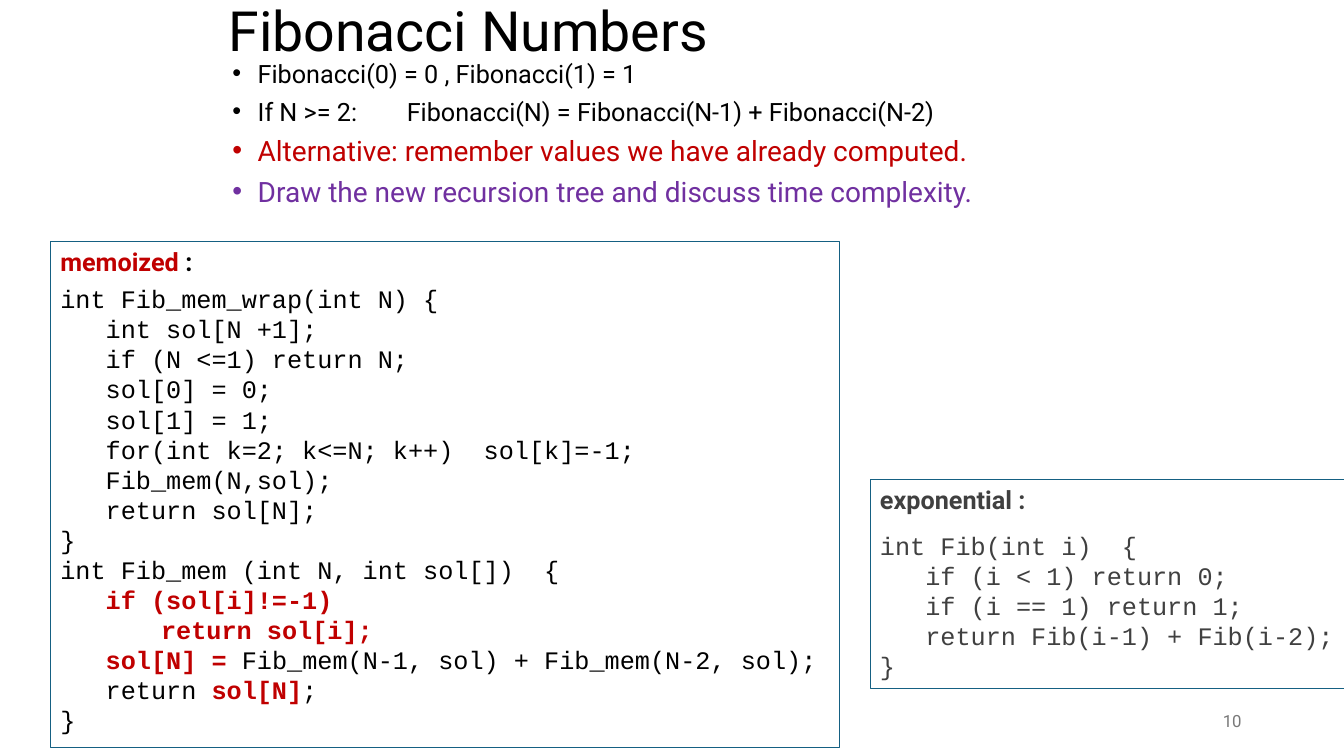
from dataclasses import dataclass

from lxml import etree
from pptx import Presentation
from pptx.dml.color import RGBColor
from pptx.enum.shapes import MSO_SHAPE
from pptx.enum.text import MSO_ANCHOR, PP_ALIGN
from pptx.oxml.ns import qn
from pptx.util import Pt

RECT = MSO_SHAPE.RECTANGLE
TOP, MIDDLE = MSO_ANCHOR.TOP, MSO_ANCHOR.MIDDLE
LEFT, RIGHT = PP_ALIGN.LEFT, PP_ALIGN.RIGHT


@dataclass(frozen=True)
class Theme:
    sans: str = "Roboto"
    mono: str = "Courier New"
    black: str = "000000"
    red: str = "C00000"
    purple: str = "7030A0"
    dark: str = "404040"
    gray: str = "797979"
    edge: str = "156082"
    title: float = 39.6
    large: float = 20
    text: float = 18
    small: float = 12


THEME = Theme()
STEP = 32.4  # three code characters
DEEP = 72
CODE_LINE = 21.5

POINTS = [
    ("Fibonacci(0) = 0 , Fibonacci(1) = 1", THEME.text, THEME.black),
    ("If N >= 2:\tFibonacci(N) = Fibonacci(N-1) + Fibonacci(N-2)", THEME.text, THEME.black),
    ("Alternative: remember values we have already computed.", THEME.large, THEME.red),
    ("Draw the new recursion tree and discuss time complexity.", THEME.large, THEME.purple),
]

# Each code line is an indent and its parts; parts at odd places are marked.
MEMO = [
    (0, ["int Fib_mem_wrap(int N) {"]),
    (STEP, ["int sol[N +1];"]),
    (STEP, ["if (N <=1) return N;"]),
    (STEP, ["sol[0] = 0;"]),
    (STEP, ["sol[1] = 1;"]),
    (STEP, ["for(int k=2; k<=N; k++)  sol[k]=-1;"]),
    (STEP, ["Fib_mem(N,sol);"]),
    (STEP, ["return sol[N];"]),
    (0, ["}"]),
    (0, ["int Fib_mem (int N, int sol[])  {"]),
    (STEP, ["", "if (sol[i]!=-1)"]),
    (DEEP, ["", "return sol[i];"]),
    (STEP, ["", "sol[N] = ", "Fib_mem(N-1, sol) + Fib_mem(N-2, sol);"]),
    (STEP, ["return ", "sol[N]", ";"]),
    (0, ["}"]),
]
PLAIN = [
    (0, ["int Fib(int i)  {"]),
    (STEP, ["if (i < 1) return 0;"]),
    (STEP, ["if (i == 1) return 1;"]),
    (STEP, ["return Fib(i-1) + Fib(i-2);"]),
    (0, ["}"]),
]


def style(run, size, color, face=THEME.sans, bold=False):
    font = run.font
    font.name, font.size, font.bold = face, Pt(size), bold
    font.color.rgb = RGBColor.from_string(color)


def add_run(para, text, *look):
    run = para.add_run()
    run.text = text
    style(run, *look)


def indent(para, left, first=0):
    props = para._p.get_or_add_pPr()
    props.set("marL", str(Pt(left)))
    props.set("indent", str(Pt(first)))
    return props


def next_para(frame, index):
    return frame.add_paragraph() if index else frame.paragraphs[0]


def add_title(slide, box):
    title = slide.shapes.title
    title.left, title.top, title.width, title.height = map(Pt, box)
    frame = title.text_frame
    frame.text = "Fibonacci Numbers"
    frame.vertical_anchor = MIDDLE
    para = frame.paragraphs[0]
    para.alignment, para.line_spacing = LEFT, 0.9
    style(para.runs[0], THEME.title, THEME.black)


def add_points(slide, box):
    frame = slide.shapes.add_textbox(*map(Pt, box)).text_frame
    frame.word_wrap = True
    for i, (text, size, color) in enumerate(POINTS):
        para = next_para(frame, i)
        para.line_spacing, para.space_before = 0.8, Pt(10 if i else 0)
        props = indent(para, 18, -18)
        etree.SubElement(props, qn("a:buFont"), typeface="Arial")
        etree.SubElement(props, qn("a:buChar"), char="•")
        if "\t" in text:
            tabs = etree.SubElement(props, qn("a:tabLst"))
            etree.SubElement(tabs, qn("a:tab"), pos=str(Pt(124.5)), algn="l")
        add_run(para, text, size, color)


def add_code(slide, box, head, lines, color, gap, wrap):
    """Draw a framed listing; head holds (text, colour) pairs."""
    shape = slide.shapes.add_shape(RECT, *map(Pt, box))
    shape.shadow.inherit = False
    shape.fill.background()
    shape.line.color.rgb = RGBColor.from_string(THEME.edge)
    shape.line.width = Pt(0.75)
    frame = shape.text_frame
    frame.word_wrap, frame.vertical_anchor = wrap, TOP
    para = frame.paragraphs[0]
    para.alignment = LEFT
    for text, tint in head:
        add_run(para, text, THEME.text, tint, THEME.sans, True)
    for i, (left, parts) in enumerate(lines):
        para = frame.add_paragraph()
        para.alignment, para.line_spacing = LEFT, Pt(CODE_LINE)
        para.space_before = Pt(0 if i else gap)
        indent(para, left)
        for j, part in enumerate(parts):
            if part:
                mark = j % 2 == 1
                tint = THEME.red if mark else color
                add_run(para, part, THEME.text, tint, THEME.mono, mark)


def add_number(slide, box):
    frame = slide.shapes.add_textbox(*map(Pt, box)).text_frame
    frame.word_wrap, frame.vertical_anchor = True, MIDDLE
    para = frame.paragraphs[0]
    para.alignment = RIGHT
    add_run(para, "10", THEME.small, THEME.gray)


def main():
    deck = Presentation()
    deck.slide_width, deck.slide_height = Pt(960), Pt(540)
    slide = deck.slides.add_slide(deck.slide_layouts[5])
    add_title(slide, (156, 0, 648, 48))
    add_points(slide, (159, 42, 648, 115))
    add_number(slide, (678, 500.5, 216, 29))
    add_code(slide, (621.5, 342.5, 340, 149), [("exponential :", THEME.dark)],
             PLAIN, THEME.dark, 11, False)
    add_code(slide, (36, 172.5, 564, 361.5),
             [("memoized", THEME.red), (" :", THEME.black)],
             MEMO, THEME.black, 5, True)
    deck.save("out.pptx")


if __name__ == "__main__":
    main()
